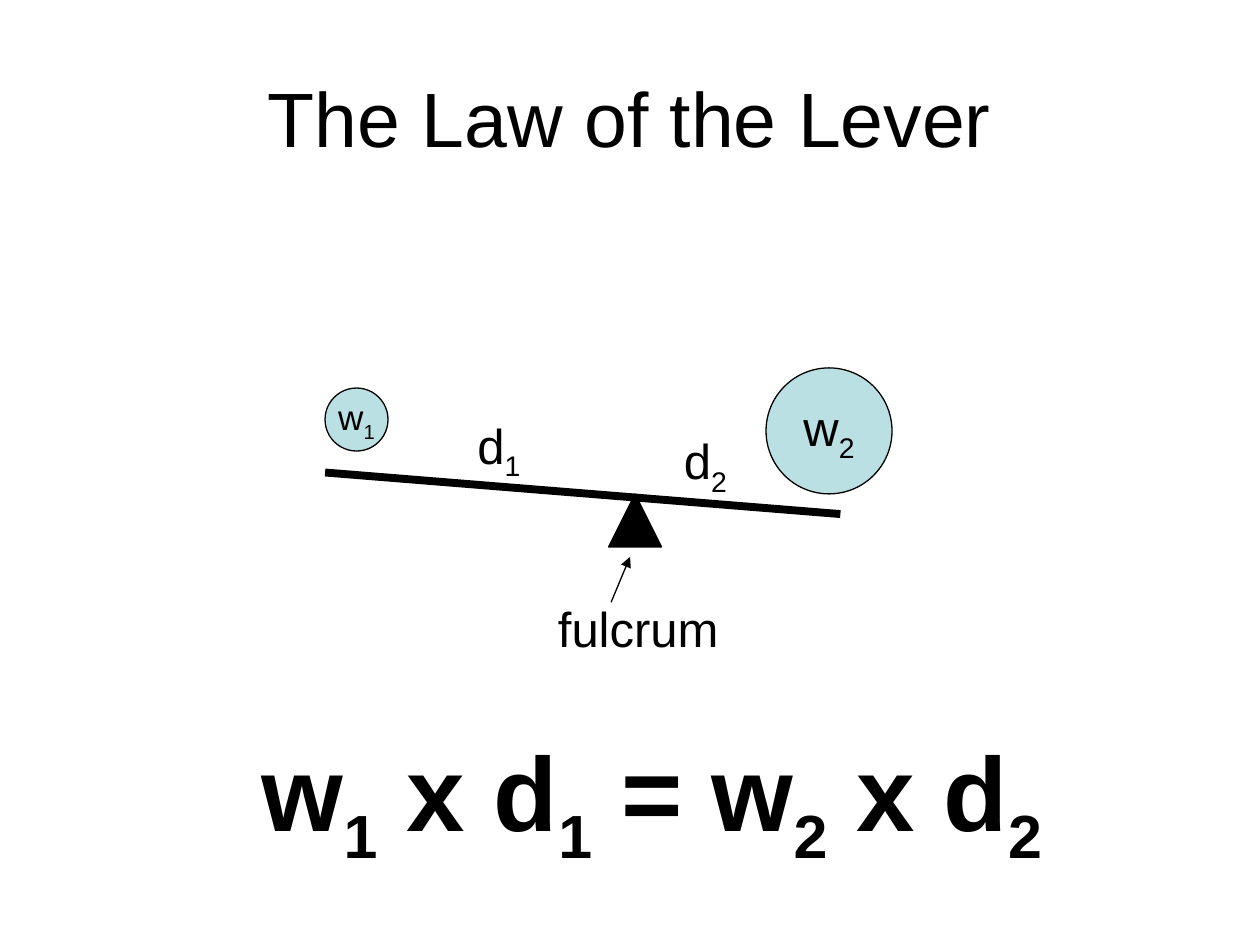
from dataclasses import dataclass
from itertools import groupby

from lxml import etree
from pptx import Presentation
from pptx import util as u
from pptx.dml.color import RGBColor
from pptx.enum import shapes, text
from pptx.oxml.ns import qn


@dataclass(frozen=True)
class Theme:
    font: str = "Arial"
    ink: RGBColor = RGBColor(0, 0, 0)
    ball: RGBColor = RGBColor(0xBB, 0xE0, 0xE3)
    title: int = 44
    label: int = 28
    small: int = 20
    law: int = 60
    thin: float = 0.75
    beam: float = 4.5


THEME = Theme()
LEFT, MID = text.PP_ALIGN.LEFT, text.PP_ALIGN.CENTER


def write(frame, words, size, align=LEFT, bold=False, wrap=False):
    """Fill a text frame, with every digit set as a subscript."""
    frame.word_wrap = wrap
    para = frame.paragraphs[0]
    para.alignment = align
    font = para.font
    font.name, font.size, font.bold = THEME.font, u.Pt(size), bold
    font.color.rgb = THEME.ink
    for low, chars in groupby(words, str.isdigit):
        run = para.add_run()
        run.text = "".join(chars)
        if low:
            run._r.get_or_add_rPr().set("baseline", "-25000")


def add_text(slide, words, box, size=THEME.label, **style):
    frame = slide.shapes.add_textbox(*map(u.Inches, box)).text_frame
    write(frame, words, size, **style)
    return frame


def add_form(slide, kind, box, fill):
    form = slide.shapes.add_shape(kind, *map(u.Inches, box))
    form.shadow.inherit = False
    form.fill.solid()
    form.fill.fore_color.rgb = fill
    form.line.color.rgb = THEME.ink
    form.line.width = u.Pt(THEME.thin)
    return form


def add_ball(slide, words, left, top, width, size):
    ball = add_form(slide, shapes.MSO_SHAPE.OVAL, (left, top, width, width), THEME.ball)
    frame = ball.text_frame
    frame.vertical_anchor = text.MSO_ANCHOR.MIDDLE
    write(frame, words, size, align=MID)


def add_line(slide, start, end, width, arrow=False):
    ends = map(u.Inches, (*start, *end))
    line = slide.shapes.add_connector(shapes.MSO_CONNECTOR.STRAIGHT, *ends)
    line.line.color.rgb = THEME.ink
    line.line.width = u.Pt(width)
    if arrow:
        tip = etree.SubElement(line.line._get_or_add_ln(), qn("a:tailEnd"))
        tip.set("type", "triangle")
    etree.SubElement(line._element.spPr, qn("a:effectLst"))


def main():
    deck = Presentation()
    deck.slide_width, deck.slide_height = u.Inches(10), u.Inches(7.5)
    slide = deck.slides.add_slide(deck.slide_layouts[6])

    # Title
    title = add_text(slide, "The Law of the Lever", (0.5, 0.3, 9, 1.25),
                     THEME.title, align=MID, wrap=True)
    title.vertical_anchor = text.MSO_ANCHOR.MIDDLE

    # Beam on its fulcrum
    add_line(slide, (2.58, 3.75), (6.67, 4.08), THEME.beam)
    add_form(slide, shapes.MSO_SHAPE.ISOSCELES_TRIANGLE,
             (4.83, 3.92, 0.42, 0.42), THEME.ink)

    # Weights, the small one with type that fits inside it
    add_ball(slide, "w2", 6.08, 2.92, 1, THEME.label)
    add_ball(slide, "w1", 2.58, 3.08, 0.5, THEME.small)

    # Distances and fulcrum label, clear of the beam and the arrow
    add_text(slide, "d1", (3.69, 3.25, 0.57, 0.57))
    add_text(slide, "d2", (5.33, 3.37, 0.57, 0.57))
    add_text(slide, "fulcrum", (4.33, 4.7, 1.48, 0.57))
    add_line(slide, (4.85, 4.78), (5, 4.42), THEME.thin, arrow=True)

    # The law
    add_text(slide, "w1 x d1 = w2 x d2", (1.98, 5.72, 6.55, 1.1),
             THEME.law, bold=True)

    deck.save("out.pptx")


if __name__ == "__main__":
    main()
